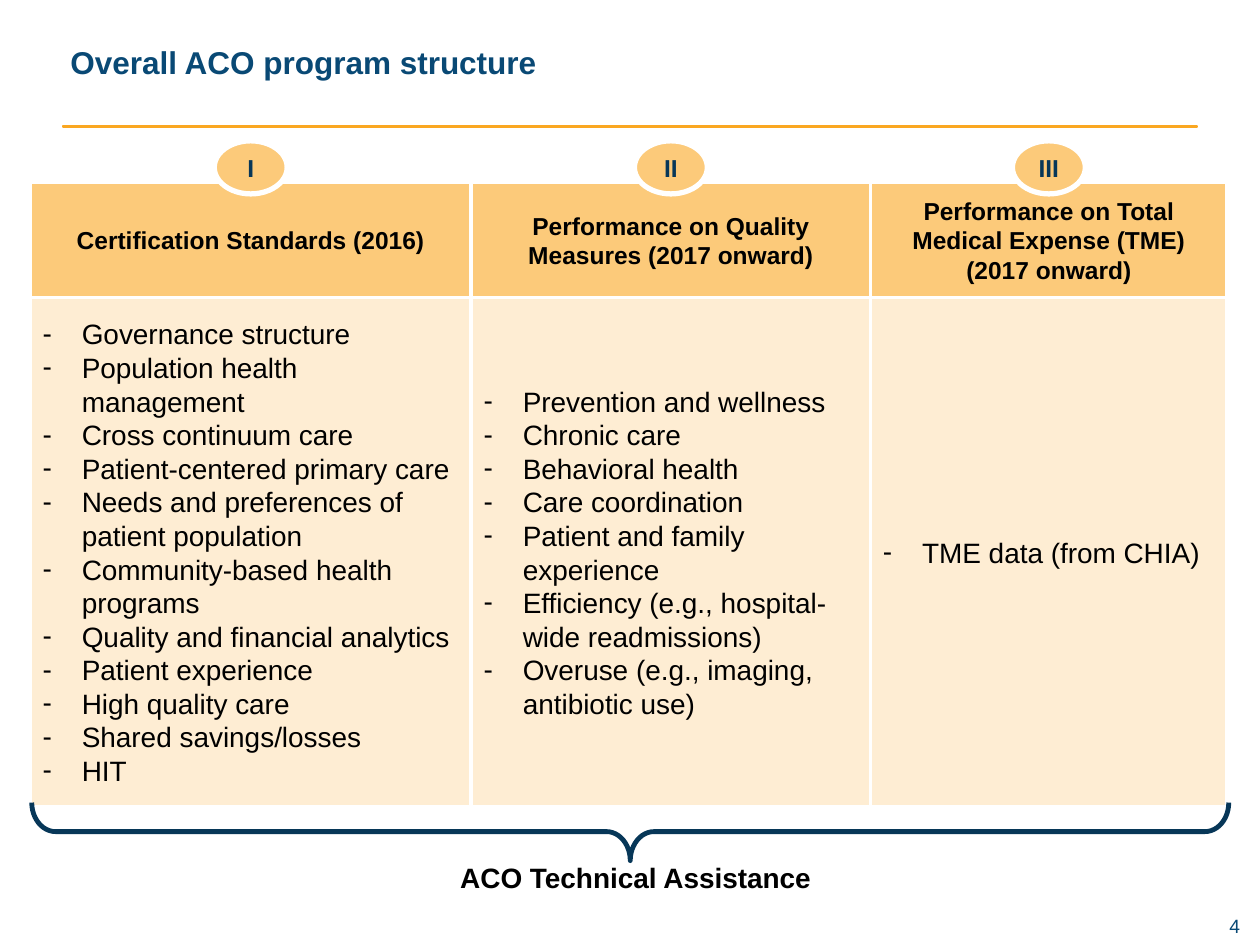
from lxml import etree
from pptx import Presentation
from pptx import util as u
from pptx.dml.color import RGBColor
from pptx.enum import shapes, text
from pptx.oxml.ns import qn

Cm = u.Cm
KIND = shapes.MSO_SHAPE
ALIGN = text.PP_ALIGN
NAVY, BLUE, GOLD = "073758", "094975", "FAA721"
AMBER, CREAM, WHITE, BLACK = "FCCA7A", "FEEDD3", "FFFFFF", "000000"

# Numeral, heading, width in cm, items
COLS = [
    ("I", "Certification Standards (2016)", 8.89, [
        "Governance structure", "Population health management",
        "Cross continuum care", "Patient-centered primary care",
        "Needs and preferences of patient population",
        "Community-based health programs",
        "Quality and financial analytics", "Patient experience",
        "High quality care", "Shared savings/losses", "HIT"]),
    ("II", "Performance on Quality Measures (2017 onward)", 8.05, [
        "Prevention and wellness", "Chronic care", "Behavioral health",
        "Care coordination", "Patient and family experience",
        "Efficiency (e.g., hospital-wide readmissions)",
        "Overuse (e.g., imaging, antibiotic use)"]),
    ("III", "Performance on Total Medical Expense (TME) (2017 onward)", 7.19,
     ["TME data (from CHIA)"]),
]


def hue(code):
    return RGBColor.from_string(code)


def dash(para):
    """Give a paragraph a hanging dash."""
    props = para._p.get_or_add_pPr()
    props.set("marL", str(Cm(0.79)))
    props.set("indent", str(-Cm(0.79)))
    etree.SubElement(props, qn("a:buFont")).set("typeface", "Arial")
    etree.SubElement(props, qn("a:buChar")).set("char", "-")


def write(frame, lines, size, color=BLACK, bold=False, align=ALIGN.LEFT,
          pad=None, bullet=False):
    form = {"word_wrap": True, "vertical_anchor": text.MSO_ANCHOR.MIDDLE}
    if pad is not None:
        form.update({f"margin_{side}": Cm(pad)
                     for side in ("left", "right", "top", "bottom")})
    for name, value in form.items():
        setattr(frame, name, value)
    for i, line in enumerate(lines):
        para = frame.add_paragraph() if i else frame.paragraphs[0]
        para.text = line
        para.alignment = align
        if bullet:
            dash(para)
        font = para.runs[0].font
        look = {"name": "Arial", "size": u.Pt(size), "bold": bold}
        for name, value in look.items():
            setattr(font, name, value)
        font.color.rgb = hue(color)


def shape(slide, kind, box, fill=None, line=None, width=1):
    item = slide.shapes.add_shape(kind, *map(Cm, box))
    item.shadow.inherit = False
    if fill:
        item.fill.solid()
        item.fill.fore_color.rgb = hue(fill)
    else:
        item.fill.background()
    if line:
        item.line.color.rgb = hue(line)
        item.line.width = u.Pt(width)
    else:
        item.line.fill.background()
    return item


def label(slide, box, words, size, **form):
    item = slide.shapes.add_textbox(*map(Cm, box))
    write(item.text_frame, [words], size, **form)


def header(slide, x, y, w):
    """Title over a gold rule."""
    label(slide, (x - 0.1, y, w, 1.91), "Overall ACO program structure", 18,
          color=BLUE, bold=True)
    shape(slide, KIND.RECTANGLE, (x, y + 2.24, w, 0.02), GOLD, GOLD)


def column(slide, x, y, w, h, num, head, items):
    """Heading cell, list cell and a numbered badge on the top edge."""
    top = 2.32
    cell = shape(slide, KIND.RECTANGLE, (x, y, w, top), AMBER, WHITE, 2)
    write(cell.text_frame, [head], 14, bold=True, align=ALIGN.CENTER)
    body = shape(slide, KIND.RECTANGLE, (x, y + top, w, h - top),
                 CREAM, WHITE, 2)
    write(body.text_frame, items, 16, bullet=True)
    wide, high = 1.47, 1.07
    badge = shape(slide, KIND.OVAL,
                  (x + (w - wide) / 2, y - 0.84, wide, high), AMBER, WHITE, 3)
    write(badge.text_frame, [num], 14, color=NAVY, bold=True,
          align=ALIGN.CENTER, pad=0)


def footer(slide, x, y, w, h):
    """Brace under the columns, with its caption."""
    note = shape(slide, KIND.ROUNDED_RECTANGLE,
                 (x + 2.33, y + 0.97, w - 4.44, 1.07))
    write(note.text_frame, ["ACO Technical Assistance"], 16, bold=True,
          align=ALIGN.CENTER)
    # A right brace turned a quarter around its centre
    brace = shape(slide, KIND.RIGHT_BRACE,
                  (x + (w - h) / 2, y + (h - w) / 2, h, w), None, NAVY, 2.75)
    brace.rotation = 90
    brace.adjustments[0], brace.adjustments[1] = 0.41, 0.5


def main():
    deck = Presentation()
    deck.slide_width, deck.slide_height = Cm(25.4), Cm(19.05)
    slide = deck.slides.add_slide(deck.slide_layouts[6])
    header(slide, 1.27, 0.3, 22.86)
    x = 0.61
    for num, head, w, items in COLS:
        column(slide, x, 3.68, w, 12.58, num, head, items)
        x += w
    footer(slide, 0.64, 16.18, 24.13, 1.17)
    # Page number
    label(slide, (18.85, 18.42, 6.15, 0.48), "4", 11, color=BLUE,
          align=ALIGN.RIGHT, pad=0)
    deck.save("out.pptx")


if __name__ == "__main__":
    main()
